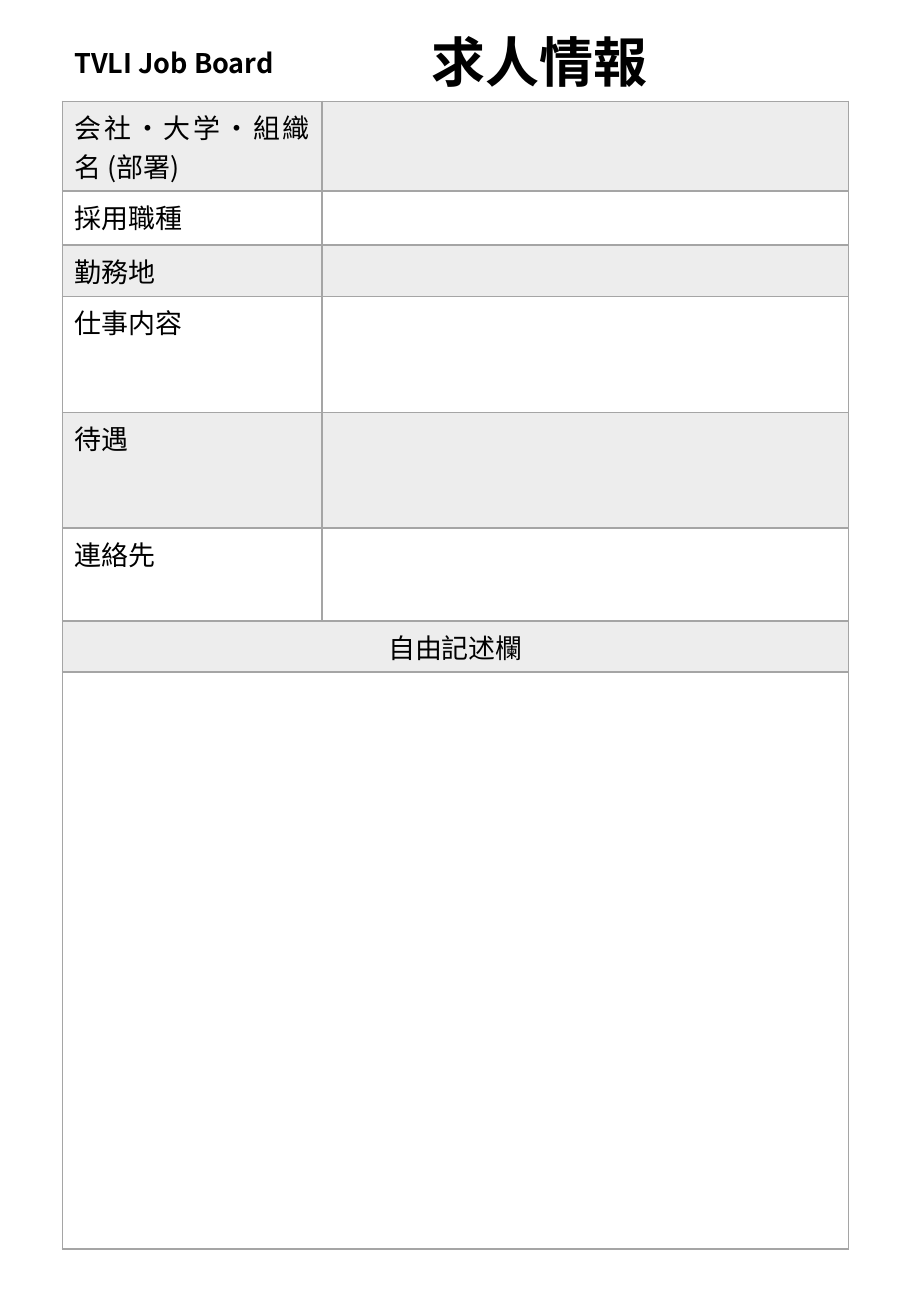
"""Build the one-page job posting form with its two headings and entry table."""
from lxml.etree import SubElement
from pptx import Presentation
from pptx.dml.color import RGBColor
from pptx.enum.text import MSO_ANCHOR, MSO_AUTO_SIZE, PP_ALIGN
from pptx.oxml import parse_xml
from pptx.oxml.ns import nsdecls, qn
from pptx.util import Pt

BLACK = RGBColor(0x00, 0x00, 0x00)
GREY = RGBColor(0xA5, 0xA5, 0xA5)
FONT = "Noto Sans CJK JP"


def write(paragraph, text, size, bold, align):
    paragraph.alignment = align
    run = paragraph.add_run()
    run.text = text
    run.font.color.rgb = BLACK
    for key, value in {"size": Pt(size), "bold": bold, "name": FONT}.items():
        setattr(run.font, key, value)
    SubElement(run.font._element, qn("a:ea"), typeface=FONT)


def style_cell(cell, shaded):
    if shaded:
        cell.fill.solid()
        cell.fill.fore_color.rgb = GREY
        tint = cell._tc.tcPr.find(".//" + qn("a:srgbClr"))
        SubElement(tint, qn("a:alpha"), val="20000")
    else:
        cell.fill.background()
    for position, side in enumerate(("lnL", "lnR", "lnT", "lnB")):
        cell._tc.tcPr.insert(position, parse_xml(
            f'<a:{side} {nsdecls("a")} w="{Pt(1)}"><a:solidFill>'
            f'<a:srgbClr val="{GREY}"/></a:solidFill></a:{side}>'))


presentation = Presentation()
presentation.slide_width = Pt(540)
presentation.slide_height = Pt(780)
slide = presentation.slides.add_slide(presentation.slide_layouts[5])

board_name = slide.shapes.title
board_place = {"left": Pt(37), "top": Pt(17), "width": Pt(211.7), "height": Pt(43.2)}
for key, value in board_place.items():
    setattr(board_name, key, value)

entries = [
    ("会社・大学・組織名 (部署)", 44, PP_ALIGN.JUSTIFY),
    ("採用職種", 32, PP_ALIGN.JUSTIFY),
    ("勤務地", 29.5, PP_ALIGN.JUSTIFY),
    ("仕事内容", 69, PP_ALIGN.JUSTIFY),
    ("待遇", 68.5, PP_ALIGN.JUSTIFY),
    ("連絡先", 55, PP_ALIGN.JUSTIFY),
    ("自由記述欄", 29, PP_ALIGN.CENTER),
    ("", 342, PP_ALIGN.LEFT),
]
form = slide.shapes.add_table(
    len(entries), 2, Pt(37), Pt(60), Pt(466), Pt(670)).table
form.first_row = False
form.horz_banding = False
for column, width in zip(form.columns, (154, 312)):
    column.width = Pt(width)
for index, (label, height, align) in enumerate(entries):
    form.rows[index].height = Pt(height)
    for cell in form.rows[index].cells:
        style_cell(cell, shaded=index % 2 == 0)
        SubElement(cell.text_frame.paragraphs[0]._p, qn("a:endParaRPr"), sz="1600")
    if label:
        write(form.cell(index, 0).text_frame.paragraphs[0], label, 16, False, align)
for index in (6, 7):
    form.cell(index, 0).merge(form.cell(index, 1))

form_heading = slide.shapes.add_textbox(Pt(248.7), Pt(17), Pt(254.2), Pt(43.2))
heading_format = {
    "word_wrap": True,
    "auto_size": MSO_AUTO_SIZE.NONE,
    "vertical_anchor": MSO_ANCHOR.MIDDLE,
}
for heading, text, size in ((board_name, "TVLI Job Board", 16), (form_heading, "求人情報", 32)):
    for key, value in heading_format.items():
        setattr(heading.text_frame, key, value)
    line = heading.text_frame.paragraphs[0]
    line.line_spacing = 0.9
    write(line, text, size, True, PP_ALIGN.JUSTIFY)

presentation.save("out.pptx")
